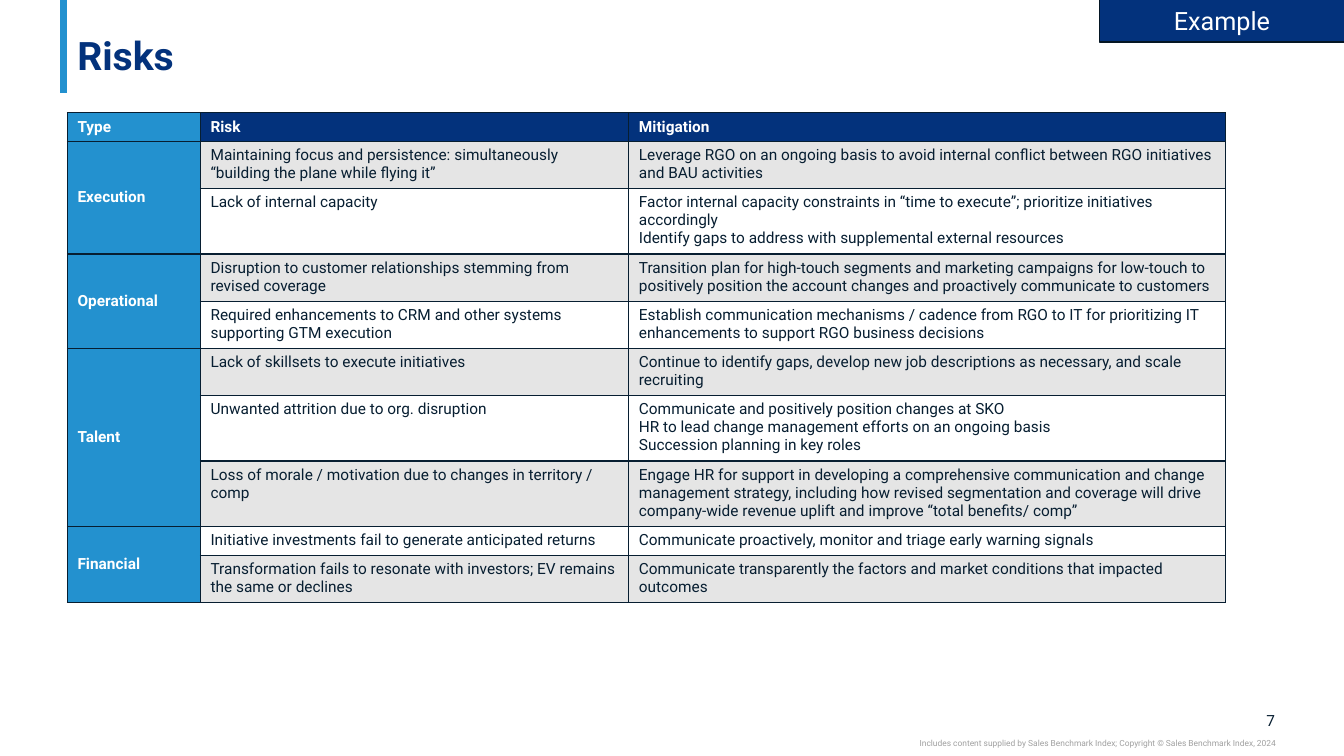
"""Build the Risks slide: a table of risks and mitigations grouped by type."""
from dataclasses import dataclass

from lxml.etree import SubElement
from pptx import Presentation
from pptx.dml.color import RGBColor
from pptx.enum.shapes import MSO_CONNECTOR as CONN, MSO_SHAPE as SHAPE
from pptx.enum.text import MSO_ANCHOR as ANCHOR, PP_ALIGN as ALIGN
from pptx.oxml import parse_xml
from pptx.oxml.ns import nsdecls, qn
from pptx.util import Cm, Pt

NAVY, BLUE, INK, WHITE = "03327C", "2391CF", "071E31", "FFFFFF"
STRIPE, MUTED, EDGE = "E5E5E5", "A0A0A0", "051624"


@dataclass
class Format:
    size: float
    color: str
    bold: bool = False
    align: ALIGN = ALIGN.LEFT
    anchor: ANCHOR = ANCHOR.TOP
    spacing: float = 1.0


@dataclass
class Label:
    text: str
    box: tuple[float, float, float, float]
    fmt: Format
    inset: float = 0


@dataclass
class Risk:
    risk: str
    mitigation: str


@dataclass
class Group:
    kind: str
    risks: list[Risk]


LABELS = [
    Label("7", (31.29, 17.91, 0.84, 0.48),
          Format(11, INK, align=ALIGN.RIGHT, anchor=ANCHOR.MIDDLE)),
    Label("Includes content supplied by Sales Benchmark Index; "
          "Copyright © Sales Benchmark Index, 2024",
          (19.05, 18.59, 13.1, 0.25), Format(6, MUTED, align=ALIGN.RIGHT)),
    Label("Risks", (1.7, -0.13, 30.45, 2.13),
          Format(28, NAVY, True, anchor=ANCHOR.BOTTOM, spacing=0.9), 0.25),
]
HEADERS = {"Type": BLUE, "Risk": NAVY, "Mitigation": NAVY}
GROUPS = [
    Group("Execution", [
        Risk("Maintaining focus and persistence: simultaneously “building the plane while flying it”",
             "Leverage RGO on an ongoing basis to avoid internal conflict between RGO "
             "initiatives and BAU activities"),
        Risk("Lack of internal capacity",
             "Factor internal capacity constraints in “time to execute”; prioritize initiatives accordingly\n"
             "Identify gaps to address with supplemental external resources"),
    ]),
    Group("Operational", [
        Risk("Disruption to customer relationships stemming from revised coverage",
             "Transition plan for high-touch segments and marketing campaigns for low-touch to "
             "positively position the account changes and proactively communicate to customers"),
        Risk("Required enhancements to CRM and other systems supporting GTM execution",
             "Establish communication mechanisms / cadence from RGO to IT for prioritizing IT "
             "enhancements to support RGO business decisions"),
    ]),
    Group("Talent", [
        Risk("Lack of skillsets to execute initiatives",
             "Continue to identify gaps, develop new job descriptions as necessary, and scale recruiting"),
        Risk("Unwanted attrition due to org. disruption",
             "Communicate and positively position changes at SKO\n"
             "HR to lead change management efforts on an ongoing basis\n"
             "Succession planning in key roles"),
        Risk("Loss of morale / motivation due to changes in territory / comp",
             "Engage HR for support in developing a comprehensive communication and change "
             "management strategy, including how revised segmentation and coverage will drive "
             "company-wide revenue uplift and improve “total benefits/ comp”"),
    ]),
    Group("Financial", [
        Risk("Initiative investments fail to generate anticipated returns",
             "Communicate proactively, monitor and triage early warning signals"),
        Risk("Transformation fails to resonate with investors; EV remains the same or declines",
             "Communicate transparently the factors and market conditions that impacted outcomes"),
    ]),
]
COLUMNS = (1.32 * 2.54, 4.25 * 2.54, 5.92 * 2.54)
ROW_HEIGHT = 0.41
HEAD = Format(11, WHITE, True)
KIND = Format(11, WHITE, True, anchor=ANCHOR.MIDDLE)
BODY = Format(11, INK)


def rgb(color: str) -> RGBColor:
    return RGBColor.from_string(color)


def write(tf, text: str, fmt: Format) -> None:
    tf.text = text
    tf.word_wrap = True
    for p in tf.paragraphs:
        p.alignment, p.line_spacing = fmt.align, fmt.spacing
        for r in p.runs:
            values = {"name": "Roboto", "size": Pt(fmt.size), "bold": fmt.bold}
            for key, value in values.items():
                setattr(r.font, key, value)
            r.font.color.rgb = rgb(fmt.color)


def add_label(s, label: Label) -> None:
    tf = s.shapes.add_textbox(*map(Cm, label.box)).text_frame
    margins = {"margin_left": label.inset, "margin_right": label.inset,
               "margin_top": 0, "margin_bottom": 0}
    for key, value in margins.items():
        setattr(tf, key, Cm(value))
    tf.vertical_anchor = label.fmt.anchor
    write(tf, label.text, label.fmt)


def add_accent(s) -> None:
    line = s.shapes.add_connector(CONN.STRAIGHT, Cm(1.6), 0, Cm(1.6), Cm(2.34))
    line.line.color.rgb, line.line.width = rgb(BLUE), Pt(5)
    SubElement(line._element.spPr, qn("a:effectLst"))


def add_tag(s) -> None:
    sp = s.shapes.add_shape(SHAPE.RECTANGLE, Cm(27.71), Cm(-0.03), Cm(6.17), Cm(1.09))
    sp.shadow.inherit = False
    sp.fill.solid()
    sp.fill.fore_color.rgb = rgb(NAVY)
    sp.line.color.rgb, sp.line.width = rgb(EDGE), Pt(1)
    sp.text_frame.vertical_anchor = ANCHOR.MIDDLE
    write(sp.text_frame, "Example", Format(18, WHITE, align=ALIGN.CENTER))


def style_cell(cell, fill: str | None) -> None:
    tc_pr = cell._tc.get_or_add_tcPr()
    for side in ("lnL", "lnR", "lnT", "lnB"):
        tc_pr.append(parse_xml(
            f'<a:{side} {nsdecls("a")} w="{Pt(1)}"><a:solidFill>'
            f'<a:srgbClr val="{INK}"/></a:solidFill></a:{side}>'))
    if fill:
        cell.fill.solid()
        cell.fill.fore_color.rgb = rgb(fill)
    else:
        cell.fill.background()


def fill_cell(cell, text: str, fmt: Format) -> None:
    cell.vertical_anchor = fmt.anchor
    write(cell.text_frame, text, fmt)


def add_risk_table(s) -> None:
    count = 1 + sum(len(group.risks) for group in GROUPS)
    table = s.shapes.add_table(count, len(COLUMNS), Cm(1.7), Cm(2.84),
                               Cm(sum(COLUMNS)), Cm(count * ROW_HEIGHT)).table
    for column, width in zip(table.columns, COLUMNS):
        column.width = Cm(width)
    for col, (text, fill) in enumerate(HEADERS.items()):
        style_cell(table.cell(0, col), fill)
        fill_cell(table.cell(0, col), text, HEAD)
    row = 1
    for group in GROUPS:
        first = table.cell(row, 0)
        fill_cell(first, group.kind, KIND)
        first.merge(table.cell(row + len(group.risks) - 1, 0))
        for item in group.risks:
            style_cell(table.cell(row, 0), BLUE)
            for col, text in enumerate((item.risk, item.mitigation), 1):
                style_cell(table.cell(row, col), STRIPE if row % 2 else None)
                fill_cell(table.cell(row, col), text, BODY)
            row += 1


def main() -> None:
    prs = Presentation()
    prs.slide_width, prs.slide_height = Cm(33.87), Cm(19.05)
    s = prs.slides.add_slide(prs.slide_layouts[6])
    add_accent(s)
    for label in LABELS:
        add_label(s, label)
    add_risk_table(s)
    add_tag(s)
    prs.save("out.pptx")


if __name__ == "__main__":
    main()
